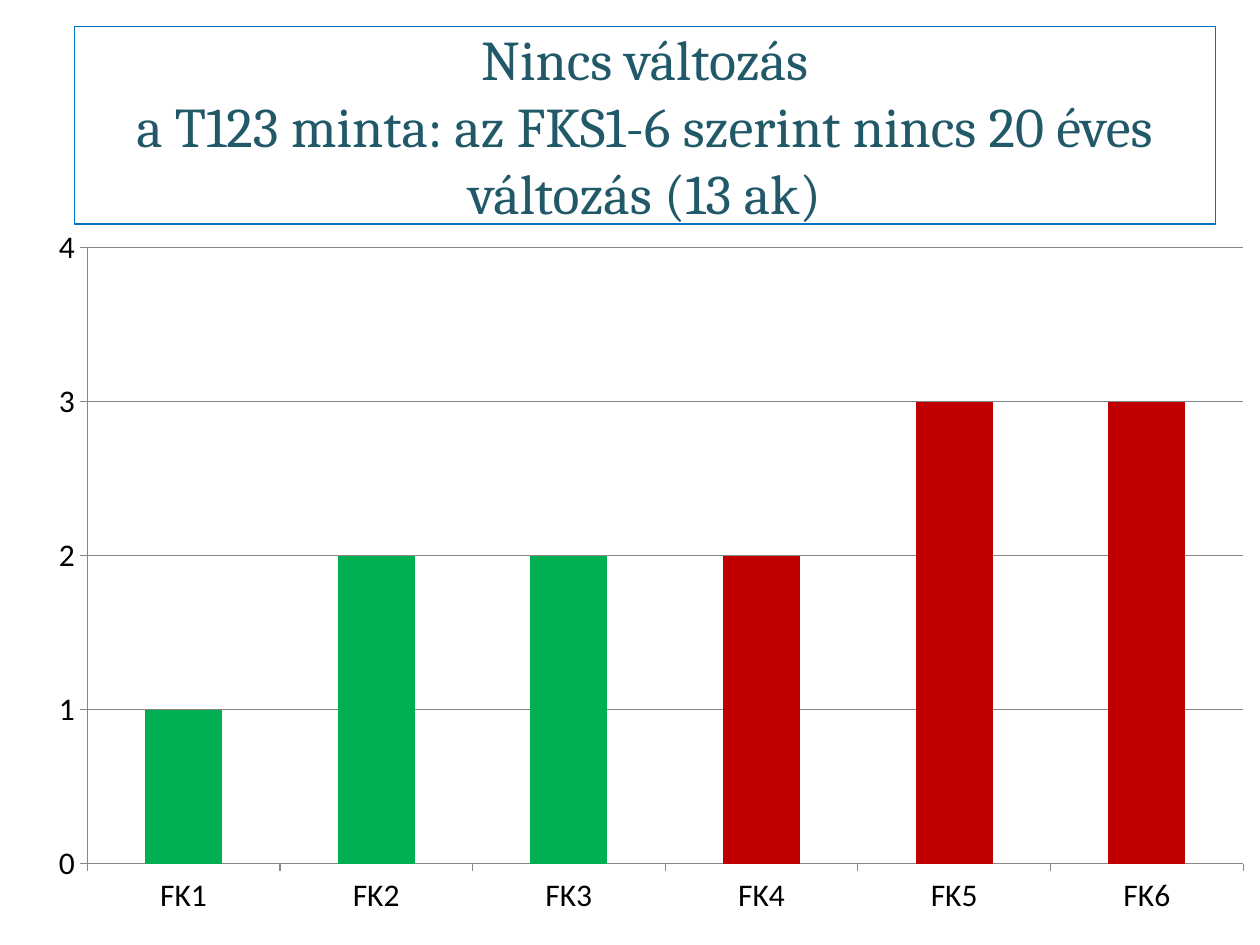
from dataclasses import dataclass

from pptx import Presentation
from pptx.chart.data import CategoryChartData
from pptx.dml.color import RGBColor
from pptx.enum.chart import XL_CHART_TYPE, XL_TICK_MARK
from pptx.enum.text import MSO_ANCHOR, PP_ALIGN
from pptx.util import Pt


@dataclass(frozen=True)
class Theme:
    heading_font: str = "Cambria"
    body_font: str = "Calibri"
    heading_size: int = 32
    axis_size: int = 18
    heading: str = "215968"
    border: str = "0070C0"
    axis_text: str = "000000"
    grid: str = "868686"
    low: str = "00B050"
    high: str = "C00000"


def rgb(value):
    return RGBColor.from_string(value)


def format_font(font, *, name, size, color):
    font.name = name
    font.size = Pt(size)
    font.color.rgb = rgb(color)


def write_text(frame, text, *, align=PP_ALIGN.CENTER, **font_format):
    paragraph = frame.paragraphs[0]
    paragraph.text = text
    paragraph.alignment = align
    for run in paragraph.runs:
        format_font(run.font, **font_format)


class SlideBuilder:
    def __init__(self, slide, theme):
        self.slide = slide
        self.theme = theme

    def heading(self, text, left, top, width, height):
        theme = self.theme
        box = self.slide.shapes.add_textbox(Pt(left), Pt(top), Pt(width), Pt(height))
        box.line.color.rgb = rgb(theme.border)
        box.line.width = Pt(0.75)
        frame = box.text_frame
        frame.word_wrap = True
        frame.vertical_anchor = MSO_ANCHOR.MIDDLE
        write_text(frame, text, name=theme.heading_font,
                   size=theme.heading_size, color=theme.heading)

    def column_chart(self, counts, colors, left, top, width, height):
        theme = self.theme
        data = CategoryChartData()
        data.categories = list(counts)
        data.add_series("Series 1", list(counts.values()))
        chart = self.slide.shapes.add_chart(
            XL_CHART_TYPE.COLUMN_CLUSTERED,
            Pt(left), Pt(top), Pt(width), Pt(height), data).chart
        chart.has_legend = False
        chart.has_title = False
        format_font(chart.font, name=theme.body_font,
                    size=theme.axis_size, color=theme.axis_text)

        # Columns
        plot = chart.plots[0]
        plot.gap_width = 150
        plot.vary_by_categories = False
        columns = plot.series[0]
        columns.format.fill.solid()
        columns.format.fill.fore_color.rgb = rgb(theme.low)
        for index, color in enumerate(colors):
            if color != theme.low:
                fill = columns.points[index].format.fill
                fill.solid()
                fill.fore_color.rgb = rgb(color)

        # Axes and gridlines
        count_axis = chart.value_axis
        count_axis.minimum_scale = 0
        count_axis.maximum_scale = 4
        count_axis.major_unit = 1
        count_axis.has_major_gridlines = True
        for axis in (chart.category_axis, count_axis):
            axis.major_tick_mark = XL_TICK_MARK.OUTSIDE
            axis.format.line.color.rgb = rgb(theme.grid)
            axis.format.line.width = Pt(0.75)
        gridline = count_axis.major_gridlines.format.line
        gridline.color.rgb = rgb(theme.grid)
        gridline.width = Pt(0.75)


def main():
    presentation = Presentation()
    presentation.slide_width = Pt(720)
    presentation.slide_height = Pt(540)
    theme = Theme()
    slide = presentation.slides.add_slide(presentation.slide_layouts[6])
    builder = SlideBuilder(slide, theme)

    # Heading
    builder.heading(
        "Nincs változás\n"
        "a T123 minta: az FKS1-6 szerint nincs 20 éves változás (13 ak)",
        42.5, 15, 652, 113)

    # Counts per category
    counts = {"FK1": 1, "FK2": 2, "FK3": 2, "FK4": 2, "FK5": 3, "FK6": 3}
    colors = [theme.low] * 3 + [theme.high] * 3
    builder.column_chart(counts, colors, 19.5, 122.5, 705, 408)

    presentation.save("out.pptx")


if __name__ == "__main__":
    main()
